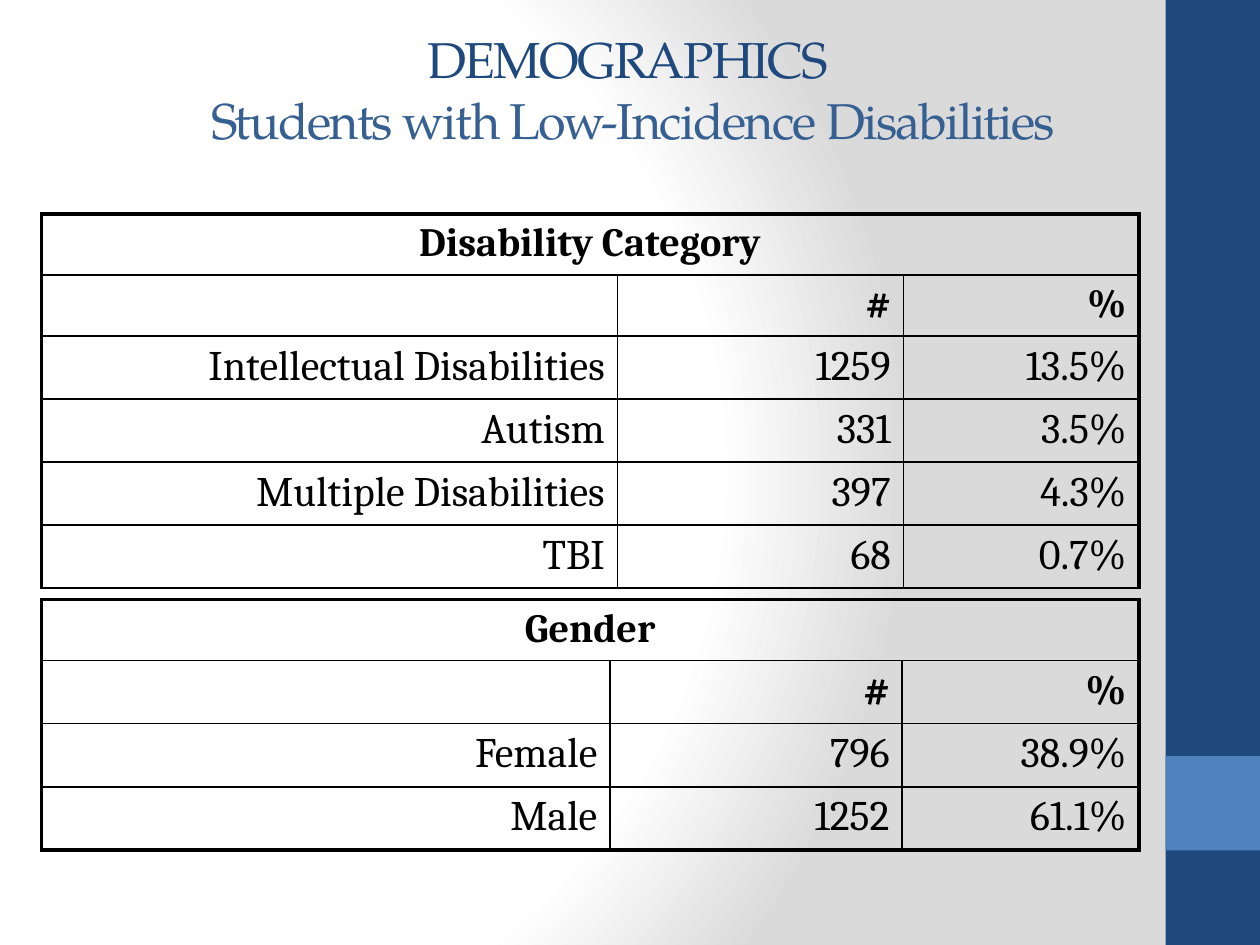
from dataclasses import dataclass

from pptx import Presentation
from pptx import util as u
from pptx.dml.color import RGBColor
from pptx.enum import shapes, text
from pptx.oxml import parse_xml
from pptx.oxml.ns import nsdecls, qn

WIDE, HIGH = 10, 7.5
COLORS = {
    "navy": "1F497D", "blue": "4F81BD", "steel": "376092",
    "black": "000000", "white": "FFFFFF", "gray": "DADADA",
}
THIN, THICK = 1, 2.25
ALIGN = text.PP_ALIGN


@dataclass
class Box:
    """A rectangle in shares of the slide's width and height."""
    left: float
    top: float
    width: float
    height: float

    def place(self) -> list:
        sides = (self.left * WIDE, self.top * HIGH,
                 self.width * WIDE, self.height * HIGH)
        return [u.Inches(side) for side in sides]


@dataclass
class Band:
    box: Box
    color: str


@dataclass
class Grid:
    title: str
    top: float
    cols: tuple
    head: int
    foot: float
    rows: list


BANDS = [
    Band(Box(0.925, 0, 0.075, 1), "navy"),
    Band(Box(0.925, 0.8, 0.075, 0.1), "blue"),
]
GRIDS = [
    Grid("Disability Category", 1.7, (4.57, 2.27, 1.87), 23, THIN, [
        ("Intellectual Disabilities", "1259", "13.5%"),
        ("Autism", "331", "3.5%"),
        ("Multiple Disabilities", "397", "4.3%"),
        ("TBI", "68", "0.7%"),
    ]),
    Grid("Gender", 4.76, (4.51, 2.32, 1.88), 24, THICK, [
        ("Female", "796", "38.9%"),
        ("Male", "1252", "61.1%"),
    ]),
]


def write(para, words: str, *, size: float, font: str = "Cambria",
          color: str = "black", bold: bool = False,
          align=ALIGN.RIGHT, track: int = 0) -> None:
    """Add a run; track is letter spacing in hundredths of a point."""
    para.alignment = align
    run = para.add_run()
    run.text = words
    run.font.size = u.Pt(size)
    run.font.name = font
    run.font.bold = bold
    run.font.color.rgb = RGBColor.from_string(COLORS[color])
    if track:
        run.font._element.set("spc", str(track))


def paint_back(slide) -> None:
    stops = "".join(
        f'<a:gs pos="{pos}000"><a:srgbClr val="{COLORS[color]}"/></a:gs>'
        for pos, color in ((0, "white"), (75, "white"), (100, "gray")))
    back = parse_xml(
        f'<p:bg {nsdecls("p", "a")}><p:bgPr><a:gradFill rotWithShape="1">'
        f'<a:gsLst>{stops}</a:gsLst><a:path path="circle">'
        '<a:fillToRect l="20000" t="50000" r="100000" b="50000"/></a:path>'
        '</a:gradFill><a:effectLst/></p:bgPr></p:bg>')
    slide._element.cSld.insert(0, back)


def draw_band(slide, band: Band) -> None:
    rect = slide.shapes.add_shape(
        shapes.MSO_SHAPE.RECTANGLE, *band.box.place())
    rect.shadow.inherit = False
    rect.fill.solid()
    rect.fill.fore_color.rgb = RGBColor.from_string(COLORS[band.color])
    rect.line.fill.background()


def draw_title(slide) -> None:
    box = Box(0.036, 0.29 / HIGH, 0.933, 0.83 / HIGH)
    frame = slide.shapes.add_textbox(*box.place()).text_frame
    frame.word_wrap = True
    frame.vertical_anchor = text.MSO_ANCHOR.MIDDLE
    para = frame.paragraphs[0]
    style = dict(size=28.8, font="TeX Gyre Pagella",
                 align=ALIGN.CENTER, track=-100)
    write(para, "DEMOGRAPHICS ", color="navy", **style)
    para.add_line_break()
    write(para, "Students with Low-Incidence Disabilities",
          color="steel", **style)


def edge_cell(cell, edges: dict) -> None:
    """Clear the cell's fill and draw its edges, given as side: points."""
    cell.fill.background()
    props = cell._tc.get_or_add_tcPr()
    for spot, (side, width) in enumerate(edges.items()):
        props.insert(spot, parse_xml(
            f'<a:ln{side} {nsdecls("a")} w="{u.Pt(width)}"><a:solidFill>'
            f'<a:srgbClr val="{COLORS["black"]}"/></a:solidFill></a:ln{side}>'))


def draw_grid(slide, grid: Grid) -> None:
    lines = [(grid.title, "", ""), ("", "#", "%"), *grid.rows]
    sizes = [23, grid.head] + [24] * len(grid.rows)
    highs = [0.47 if size == 23 else 0.48 for size in sizes]
    box = Box(0.033, grid.top / HIGH, sum(grid.cols) / WIDE, sum(highs) / HIGH)
    table = slide.shapes.add_table(
        len(lines), len(grid.cols), *box.place()).table
    table.first_row = table.horz_banding = False
    plain = "{2D5ABB26-0587-4C30-8999-92F81FD0307C}"
    table._tbl.tblPr.find(qn("a:tableStyleId")).text = plain
    for col, width in zip(table.columns, grid.cols):
        col.width = u.Inches(width)
    for row, height in zip(table.rows, highs):
        row.height = u.Inches(height)
    table.cell(0, 0).merge(table.cell(0, 2))

    for r, line in enumerate(lines):
        for c, words in enumerate(line):
            cell = table.cell(r, c)
            edges = {
                "L": THICK if c == 0 else THIN,
                "R": THICK if c == 2 or r == 0 else THIN,
                "T": THICK if r == 0 else THIN,
                "B": grid.foot if r == len(lines) - 1 else THIN,
            }
            if cell.is_spanned:
                del edges["L"]
            edge_cell(cell, edges)
            para = cell.text_frame.paragraphs[0]
            if words:
                write(para, words, size=sizes[r], bold=r < 2,
                      align=ALIGN.CENTER if r == 0 else ALIGN.RIGHT)
            else:
                para.font.size = u.Pt(sizes[r])


def main() -> None:
    deck = Presentation()
    deck.slide_width, deck.slide_height = u.Inches(WIDE), u.Inches(HIGH)
    slide = deck.slides.add_slide(deck.slide_layouts[6])
    paint_back(slide)
    for band in BANDS:
        draw_band(slide, band)
    draw_title(slide)
    for grid in GRIDS:
        draw_grid(slide, grid)
    deck.save("out.pptx")


if __name__ == "__main__":
    main()
